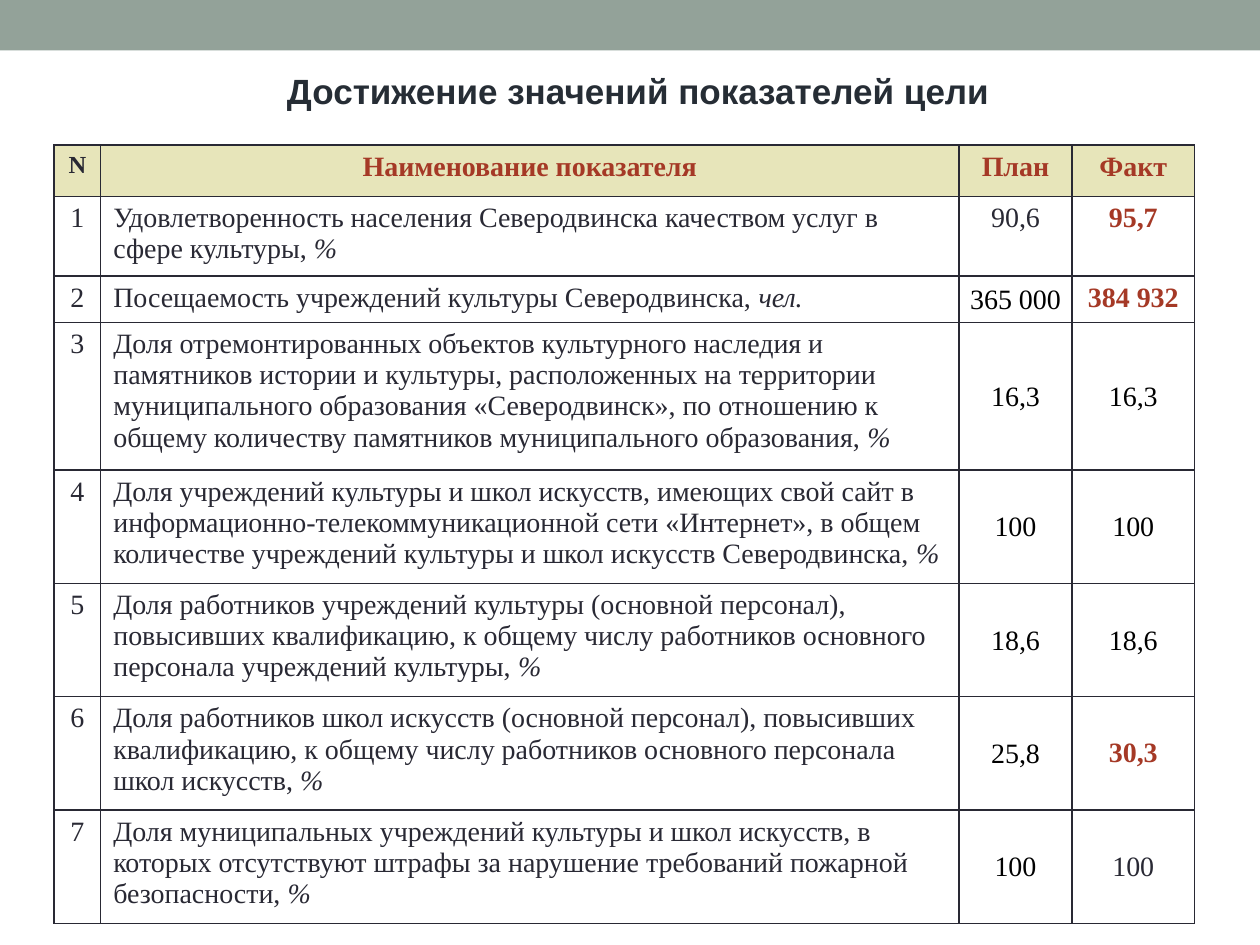
"""Build a slide with a table of planned and actual culture indicators."""
from lxml import etree
from pptx import Presentation
from pptx.dml.color import RGBColor
from pptx.enum.shapes import MSO_SHAPE
from pptx.enum.text import MSO_ANCHOR, MSO_AUTO_SIZE, PP_ALIGN
from pptx.oxml.ns import qn
from pptx.util import Inches, Pt

RECTANGLE = MSO_SHAPE.RECTANGLE
TOP, MIDDLE = MSO_ANCHOR.TOP, MSO_ANCHOR.MIDDLE
LEFT, CENTER = PP_ALIGN.LEFT, PP_ALIGN.CENTER
NO_FIT = MSO_AUTO_SIZE.NONE

SAGE = RGBColor(0x93, 0xA2, 0x99)
SAND = RGBColor(0xE7, 0xE5, 0xBA)
INK = RGBColor(0x29, 0x29, 0x34)
TITLE_INK = RGBColor(0x26, 0x2D, 0x35)
RUST = RGBColor(0xA5, 0x39, 0x26)
BLACK = RGBColor(0, 0, 0)

COLUMN_WIDTHS = [0.37, 6.81, 0.9, 0.97]
ROW_HEIGHTS = [0.41, 0.63, 0.37, 1.17] + [0.9] * 4
HEADERS = ["N", "Наименование показателя", "План", "Факт"]

PLAIN = {"color": INK}
CENTERED = {"color": INK, "anchor": MIDDLE}
TIGHT = {"color": BLACK, "anchor": MIDDLE, "tight": True}
STRONG = {"color": RUST, "bold": True}
STRONG_CENTERED = {**STRONG, "anchor": MIDDLE}

INDICATORS = [
    ("Удовлетворенность населения Северодвинска качеством услуг в сфере культуры, ",
     "%", ("90,6", PLAIN), ("95,7", STRONG)),
    ("Посещаемость учреждений культуры Северодвинска, ",
     "чел.", ("365 000", TIGHT), ("384 932", STRONG)),
    ("Доля отремонтированных объектов культурного наследия и памятников истории "
     "и культуры, расположенных на территории муниципального образования "
     "«Северодвинск», по отношению к общему количеству памятников "
     "муниципального образования, ",
     "%", ("16,3", TIGHT), ("16,3", TIGHT)),
    ("Доля учреждений культуры и школ искусств, имеющих свой сайт в "
     "информационно-телекоммуникационной сети «Интернет», в общем количестве "
     "учреждений культуры и школ искусств Северодвинска, ",
     "%", ("100", TIGHT), ("100", TIGHT)),
    ("Доля работников учреждений культуры (основной персонал), повысивших "
     "квалификацию, к общему числу работников основного персонала учреждений культуры, ",
     "%", ("18,6", TIGHT), ("18,6", TIGHT)),
    ("Доля работников школ искусств (основной персонал), повысивших "
     "квалификацию, к общему числу работников основного персонала школ искусств, ",
     "%", ("25,8", TIGHT), ("30,3", STRONG_CENTERED)),
    ("Доля муниципальных учреждений культуры и школ искусств, в которых "
     "отсутствуют штрафы за нарушение требований пожарной безопасности, ",
     "%", ("100", TIGHT), ("100", CENTERED)),
]


class SlideBuilder:
    """Hold the style and the current slide."""

    body_font = "Times New Roman"
    title_font = "Arial"
    body_size = 16

    def __init__(self, deck):
        """Add a title-only slide to the deck."""
        self.page = deck.slides.add_slide(deck.slide_layouts[5])

    def band(self, left, top, width, height, color):
        """Draw a plain filled rectangle."""
        box = self.page.shapes.add_shape(
            RECTANGLE, Inches(left), Inches(top), Inches(width), Inches(height))
        box.shadow.inherit = False
        box.fill.solid()
        box.fill.fore_color.rgb = color
        box.line.fill.background()

    def span(self, para, text, color, **formats):
        """Add a formatted run to a paragraph."""
        span = para.add_run()
        span.text = text
        values = {"name": self.body_font, "size": Pt(self.body_size),
                  "bold": False, "italic": False, **formats}
        for name, value in values.items():
            setattr(span.font, name, value)
        span.font.color.rgb = color

    def title(self, text, left, top, width, height):
        """Place and format the title placeholder."""
        box = self.page.shapes.title
        places = {"left": left, "top": top, "width": width, "height": height}
        for name, value in places.items():
            setattr(box, name, Inches(value))
        frame = box.text_frame
        formats = {"word_wrap": True, "auto_size": NO_FIT, "vertical_anchor": TOP}
        for name, value in formats.items():
            setattr(frame, name, value)
        para = frame.paragraphs[0]
        para.alignment = CENTER
        self.span(para, text, TITLE_INK, name=self.title_font, size=Pt(20), bold=True)

    def table(self, left, top, widths, heights):
        """Add an unstyled table with the given grid."""
        table = self.page.shapes.add_table(
            len(heights), len(widths), Inches(left), Inches(top),
            Inches(sum(widths)), Inches(sum(heights))).table
        table.first_row = table.horz_banding = False
        for column, width in zip(table.columns, widths):
            column.width = Inches(width)
        for row, height in zip(table.rows, heights):
            row.height = Inches(height)
        return table

    def borders(self, cell):
        """Draw thin dark lines on all sides of a cell."""
        properties = cell._tc.get_or_add_tcPr()
        for side in ("a:lnL", "a:lnR", "a:lnT", "a:lnB"):
            line = etree.SubElement(properties, qn(side), w=str(Pt(1)))
            fill = etree.SubElement(line, qn("a:solidFill"))
            etree.SubElement(fill, qn("a:srgbClr"), val=str(INK))

    def cell(self, cell, text, color, unit="", fill=None, align=CENTER,
             anchor=TOP, tight=False, **formats):
        """Fill a table cell with text and an optional italic unit."""
        self.borders(cell)
        if fill is None:
            cell.fill.background()
        else:
            cell.fill.solid()
            cell.fill.fore_color.rgb = fill
        cell.vertical_anchor = anchor
        if tight:
            cell.margin_left = cell.margin_right = cell.margin_top = Inches(0.01)
            cell.margin_bottom = 0
        para = cell.text_frame.paragraphs[0]
        para.alignment = align
        self.span(para, text, color, **formats)
        if unit:
            self.span(para, unit, color, italic=True)


def main():
    """Build and save the deck."""
    deck = Presentation()
    deck.slide_width, deck.slide_height = Inches(10), Inches(7.5)
    slide = SlideBuilder(deck)
    slide.band(0, 0, 10, 0.4, SAGE)
    table = slide.table(0.43, 1.15, COLUMN_WIDTHS, ROW_HEIGHTS)
    for column, header in enumerate(HEADERS):
        look = {"color": RUST} if column else {"color": INK, "size": Pt(14)}
        slide.cell(table.cell(0, column), header, fill=SAND, bold=True, **look)
    for row, (name, unit, plan, fact) in enumerate(INDICATORS, 1):
        slide.cell(table.cell(row, 0), str(row), INK)
        slide.cell(table.cell(row, 1), name, INK, unit=unit, align=LEFT)
        for column, (value, look) in enumerate((plan, fact), 2):
            slide.cell(table.cell(row, column), value, **look)
    slide.title("Достижение значений показателей цели", 0.83, 0.5, 8.47, 0.44)
    deck.save("out.pptx")


if __name__ == "__main__":
    main()
